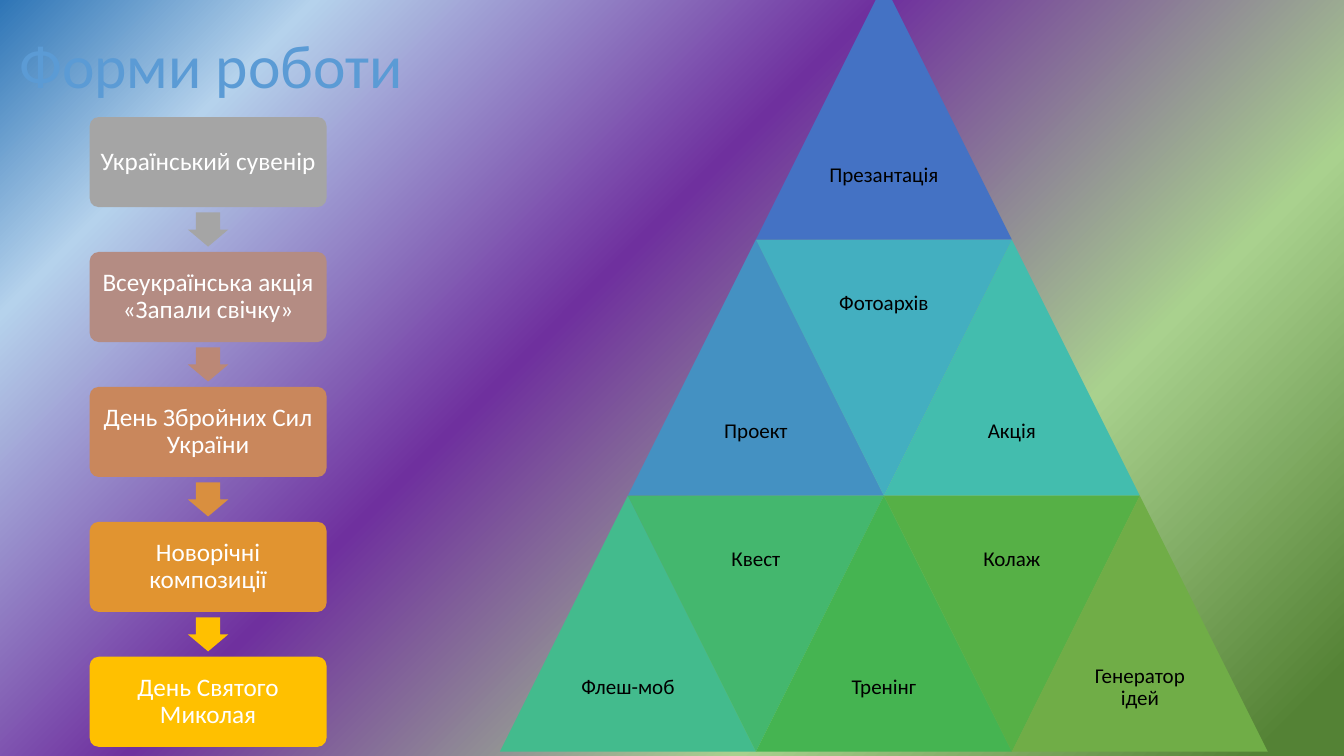
from pptx import Presentation
from pptx.dml.color import RGBColor
from pptx.enum.shapes import MSO_SHAPE
from pptx.enum.text import MSO_ANCHOR, MSO_AUTO_SIZE, PP_ALIGN
from pptx.oxml import parse_xml
from pptx.oxml.ns import nsdecls, qn
from pptx.util import Cm, Pt

COLORS = {"title": "5B9BD5", "label": "000000", "step": "FFFFFF"}
BACKGROUND = [(4, "548235"), (29, "A9D18E"), (58, "6F309E"),
              (85, "B5D2EC"), (100, "2E75B6")]

# Lengths in centimetres
SIDE, APEX_LEFT, APEX_TOP = 6.45, 19.05, -0.41
STEP_LEFT, STEP_TOP, STEP_W, STEP_H, STEP_PITCH = 2.26, 2.95, 5.97, 2.27, 3.4
ARROW_W, ARROW_H = 1.02, 0.86

# Rows of the pyramid, from left to right: label and fill
PYRAMID = [
    [("Презантація", "4472C4")],
    [("Проект", "4491C2"), ("Фотоархів", "43AFC0"), ("Акція", "43BDAE")],
    [("Флеш-моб", "43BB8D"), ("Квест", "44B76E"), ("Тренінг", "45B451"),
     ("Колаж", "56B046"), ("Генератор ідей", "70AD47")],
]
# Steps: text, box fill, fill of the arrow below
STEPS = [
    ("Український сувенір", "A5A5A5", "A5A5A5"),
    ("Всеукраїнська акція «Запали свічку»", "B48C83", "BB8876"),
    ("День Збройних Сил України", "C9875C", "D98F3F"),
    ("Новорічні композиції", "E19430", "FFC000"),
    ("День Святого Миколая", "FFC000", None),
]


def set_background(s):
    s.background.fill.gradient()
    stops = "".join(
        f'<a:gs pos="{pos * 1000}"><a:srgbClr val="{color}"/></a:gs>'
        for pos, color in BACKGROUND)
    radial = parse_xml(
        f'<a:gradFill {nsdecls("a")} rotWithShape="1"><a:gsLst>{stops}</a:gsLst>'
        '<a:path path="circle"><a:fillToRect l="100000" t="100000"/></a:path>'
        '<a:tileRect r="-100000" b="-100000"/></a:gradFill>')
    grad = s.element.find(".//" + qn("a:gradFill"))
    grad.getparent().replace(grad, radial)


def write(sp, text, size, color, align=PP_ALIGN.CENTER, inset=None):
    tf = sp.text_frame
    frame = {"word_wrap": True, "auto_size": MSO_AUTO_SIZE.NONE,
             "vertical_anchor": MSO_ANCHOR.MIDDLE}
    if inset is not None:
        for side in ("left", "top", "right", "bottom"):
            frame[f"margin_{side}"] = Cm(inset)
    for name, value in frame.items():
        setattr(tf, name, value)
    p = tf.paragraphs[0]
    p.alignment, p.line_spacing = align, 0.9
    r = p.add_run()
    r.text = text
    for name, value in {"name": "Calibri", "size": Pt(size)}.items():
        setattr(r.font, name, value)
    r.font.color.rgb = RGBColor.from_string(COLORS[color])


def add_block(s, kind, left, top, width, height, fill, adjustments=()):
    sp = s.shapes.add_shape(kind, Cm(left), Cm(top), Cm(width), Cm(height))
    sp.shadow.inherit = False
    sp.fill.solid()
    sp.fill.fore_color.rgb = RGBColor.from_string(fill)
    sp.line.fill.background()
    for i, value in enumerate(adjustments):
        sp.adjustments[i] = value
    return sp


def add_title(s):
    sp = s.shapes.title
    place = {"left": 0.23, "top": 0.18, "width": 10.46, "height": 3.1}
    for name, value in place.items():
        setattr(sp, name, Cm(value))
    write(sp, "Форми роботи", 44, "title", PP_ALIGN.LEFT)


def add_pyramid(s):
    half = SIDE / 2
    for row, cells in enumerate(PYRAMID):
        top = APEX_TOP + row * SIDE
        for col, (text, fill) in enumerate(cells):
            left = APEX_LEFT + (col - row) * half
            inverted = col % 2 == 1
            sp = add_block(s, MSO_SHAPE.ISOSCELES_TRIANGLE,
                           left, top, SIDE, SIDE, fill)
            sp.rotation = 180 if inverted else 0
            # The label sits in the wide half of the triangle
            label_top = top if inverted else top + half
            label = s.shapes.add_textbox(Cm(left + half / 2), Cm(label_top),
                                         Cm(half), Cm(half))
            write(label, text, 15, "label", inset=0.15)


def add_steps(s):
    arrow_left = STEP_LEFT + (STEP_W - ARROW_W) / 2
    arrow_offset = (STEP_H + STEP_PITCH - ARROW_H) / 2
    for i, (text, fill, arrow_fill) in enumerate(STEPS):
        top = STEP_TOP + i * STEP_PITCH
        sp = add_block(s, MSO_SHAPE.ROUNDED_RECTANGLE,
                       STEP_LEFT, top, STEP_W, STEP_H, fill, [0.1])
        write(sp, text, 18, "step", inset=0.18)
        if arrow_fill:
            add_block(s, MSO_SHAPE.DOWN_ARROW, arrow_left, top + arrow_offset,
                      ARROW_W, ARROW_H, arrow_fill, [0.6, 0.5])


def main():
    prs = Presentation()
    prs.slide_width, prs.slide_height = Cm(33.87), Cm(19.05)
    s = prs.slides.add_slide(prs.slide_layouts[5])
    set_background(s)
    add_title(s)
    add_pyramid(s)
    add_steps(s)
    prs.save("out.pptx")


if __name__ == "__main__":
    main()
